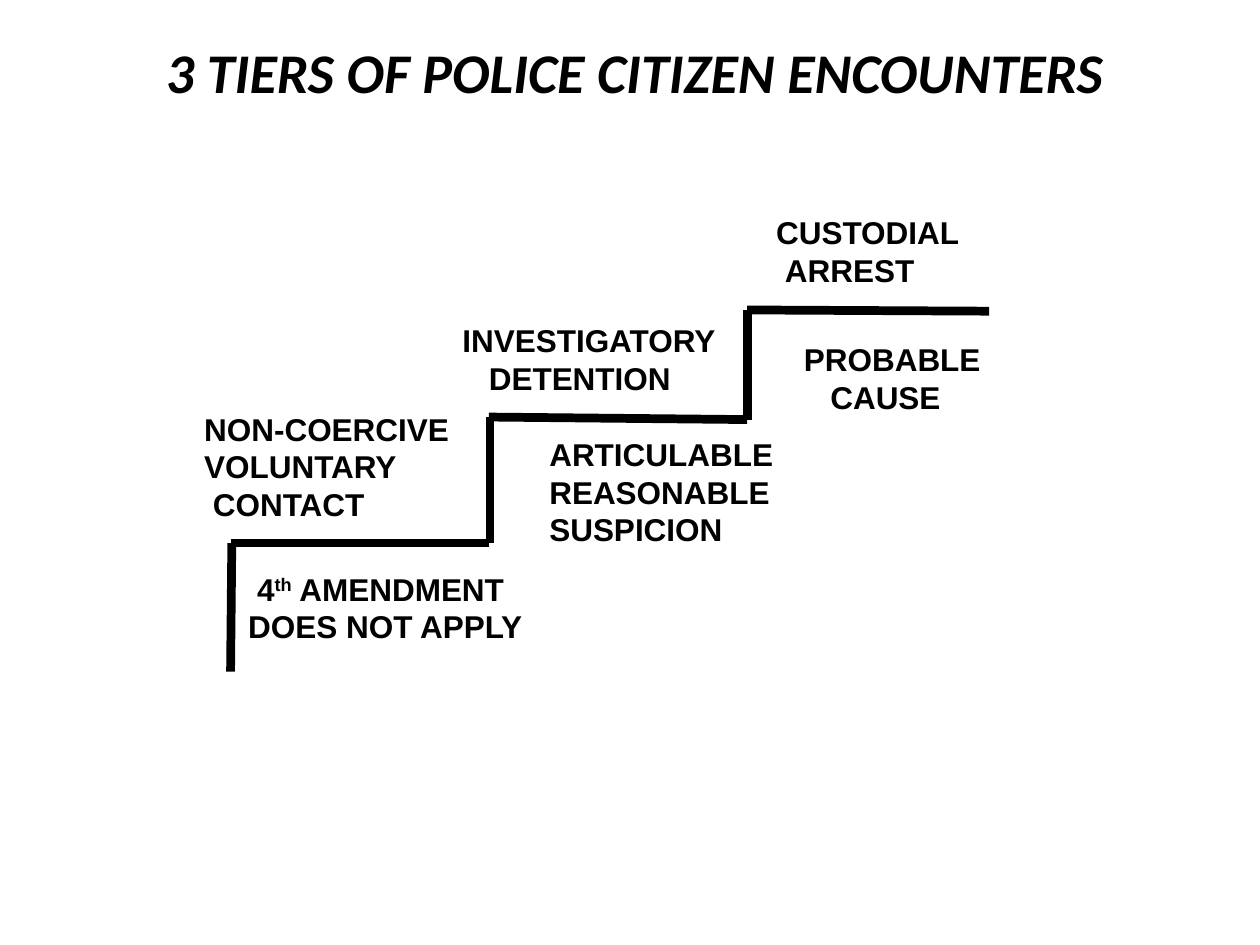
from lxml import etree
from pptx import Presentation
from pptx.dml.color import RGBColor
from pptx.enum.shapes import MSO_CONNECTOR
from pptx.enum.text import MSO_ANCHOR, PP_ALIGN
from pptx.oxml.ns import qn
from pptx.util import Inches, Pt

LINE = MSO_CONNECTOR.STRAIGHT
TOP = MSO_ANCHOR.TOP
CENTER = PP_ALIGN.CENTER
COLORS = {"ink": "000000"}
INK = RGBColor.from_string(COLORS["ink"])
HEAD = {"name": "Calibri", "size": Pt(32), "bold": True, "italic": True}
LABEL = {"name": "Arial", "size": Pt(18), "bold": True}


def add_run(para, text, form):
    run = para.add_run()
    run.text = text
    for key, value in form.items():
        setattr(run.font, key, value)
    run.font.color.rgb = INK
    return run


prs = Presentation()
prs.slide_width, prs.slide_height = Inches(10), Inches(7.5)
slide = prs.slides.add_slide(prs.slide_layouts[1])

# Heading in the body placeholder, without a bullet
title = slide.shapes.title
title.element.getparent().remove(title.element)
body = slide.placeholders[1]
body.left, body.top = Inches(0.5), Inches(0.25)
body.width, body.height = Inches(9.08), Inches(6.45)
body.text_frame.vertical_anchor = TOP
para = body.text_frame.paragraphs[0]
para.alignment = CENTER
props = para._p.get_or_add_pPr()
props.set("marL", str(Inches(0.38)))
props.set("indent", str(Inches(-0.38)))
etree.SubElement(props, qn("a:buNone"))
add_run(para, "3 TIERS OF POLICE CITIZEN ENCOUNTERS", HEAD)

# Labels: left, top, width, then lines as (indent, text); ^ marks superscript
labels = [
    (6.16, 1.69, 1.47, [(0, "CUSTODIAL"), (0.07, "ARREST")]),
    (6.38, 2.7, 1.42, [(0, "PROBABLE"), (0.21, "CAUSE")]),
    (3.53, 2.55, 2.23, [(0.14, "INVESTIGATORY"), (0.35, "DETENTION")]),
    (1.62, 3.25, 2.02, [(0, "NON-COERCIVE"), (0, "VOLUNTARY"),
                        (0.07, "CONTACT")]),
    (4.36, 3.45, 1.8, [(0, "ARTICULABLE"), (0, "REASONABLE"),
                       (0, "SUSPICION")]),
    (1.97, 4.52, 2.2, [(0.07, "4^th^ AMENDMENT"), (0, "DOES NOT APPLY")]),
]
for left, top, width, lines in labels:
    box = slide.shapes.add_textbox(Inches(left), Inches(top), Inches(width),
                                   Inches(0.3 * len(lines) + 0.01))
    frame = box.text_frame
    frame.word_wrap = True
    for side in ("left", "top", "right", "bottom"):
        setattr(frame, "margin_" + side, 0)
    for row, (indent, text) in enumerate(lines):
        para = frame.add_paragraph() if row else frame.paragraphs[0]
        para._p.get_or_add_pPr().set("marL", str(Inches(indent)))
        for part, piece in enumerate(text.split("^")):
            run = add_run(para, piece, LABEL)
            if part % 2:
                run.font._element.set("baseline", "30000")

# Stairs: risers and treads from the bottom up
steps = [
    (1.83, 5.33, 1.84, 4.31),
    (1.83, 4.31, 3.88, 4.31),
    (3.89, 4.31, 3.89, 3.31),
    (3.88, 3.31, 5.93, 3.33),
    (5.93, 3.33, 5.93, 2.46),
    (5.93, 2.46, 7.85, 2.47),
]
for ends in steps:
    step = slide.shapes.add_connector(LINE, *[Inches(end) for end in ends])
    step.line.color.rgb = INK
    step.line.width = Pt(5)
    etree.SubElement(step._element.spPr, qn("a:effectLst"))

prs.save("out.pptx")
